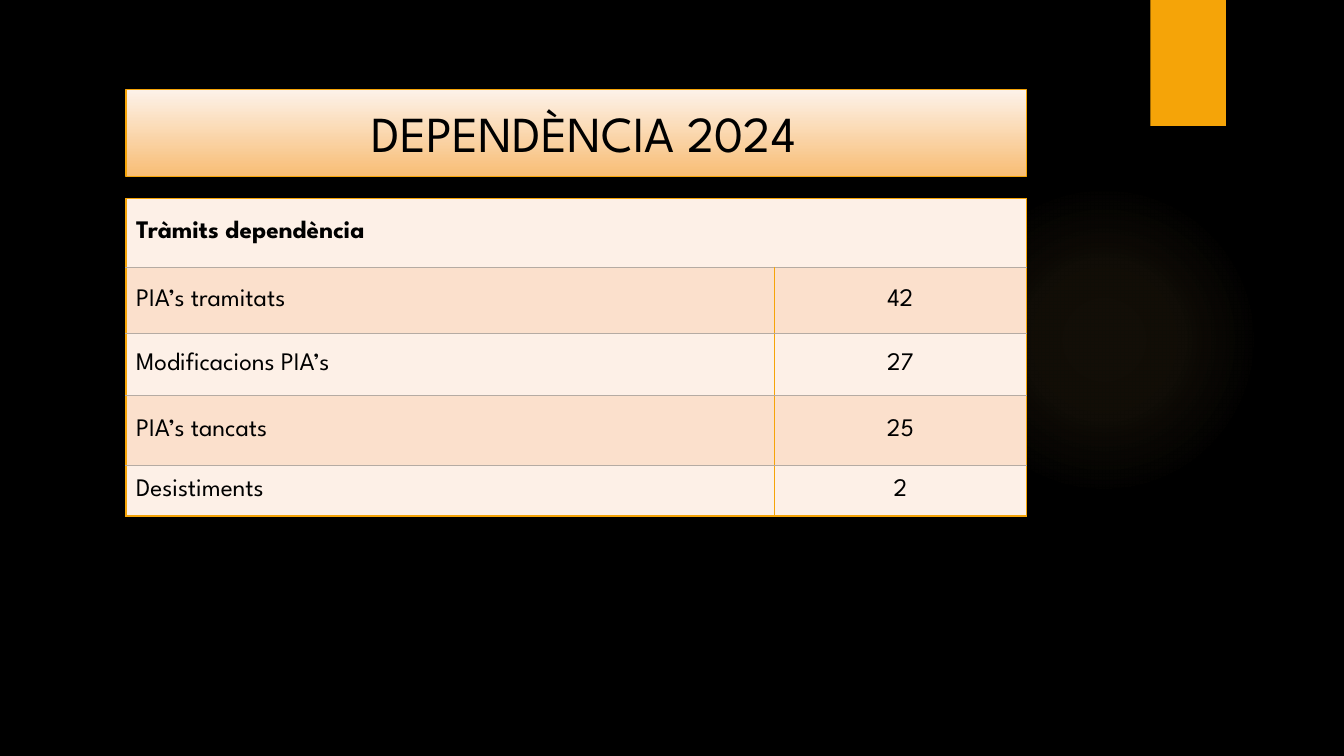
from lxml.etree import SubElement
from pptx import Presentation
from pptx.dml.color import RGBColor
from pptx.enum.shapes import MSO_SHAPE as Shape
from pptx.enum.text import MSO_ANCHOR as Anchor, PP_ALIGN as Align
from pptx.oxml import parse_xml
from pptx.oxml.ns import nsdecls, qn
from pptx.util import Inches, Pt

COLORS = {
    "background": "000000", "text": "000000", "accent": "F5A408",
    "glow": "FAC96A", "title_top": "FDF2E9", "title_bottom": "F8BD75",
    "light": "FDF0E7", "dark": "FBE0CC", "rule": "B5ABA3",
}
FONT = "League Spartan"
HEADING = "Tràmits dependència"
ROWS = [("PIA’s tramitats", "42"), ("Modificacions PIA’s", "27"),
        ("PIA’s tancats", "25"), ("Desistiments", "2")]
COLUMN_WIDTHS = [6.43, 2.5]
ROW_HEIGHTS = [0.68, 0.66, 0.61, 0.7, 0.5]
LEFT, WIDTH = 1.25, 8.93


def color(name):
    """Return the named colour."""
    return RGBColor.from_string(COLORS[name])


def add_span(para, text, **values):
    """Add a run with the given font values."""
    span = para.add_run()
    span.text = text
    for name, value in {"name": FONT, **values}.items():
        setattr(span.font, name, value)
    span.font.color.rgb = color("text")


def add_box(page, kind, left, top, width, height):
    """Add a shape without shadow or outline."""
    box = page.shapes.add_shape(kind, *map(Inches, (left, top, width, height)))
    box.shadow.inherit = False
    box.line.fill.background()
    return box


def add_glow(page):
    """Add the faint round glow at the right."""
    box = add_box(page, Shape.OVAL, 9.41, 1.83, 3.08, 3.08)
    stops = "".join(
        f'<a:gs pos="{place * 1000}"><a:srgbClr val="{COLORS["glow"]}">'
        f'<a:alpha val="{alpha * 1000}"/></a:srgbClr></a:gs>'
        for place, alpha in ((0, 7), (36, 6), (69, 0)))
    gradient = parse_xml(
        f'<a:gradFill {nsdecls("a")}><a:gsLst>{stops}</a:gsLst><a:path path="circle">'
        '<a:fillToRect l="50000" t="50000" r="50000" b="50000"/></a:path></a:gradFill>')
    box.element.spPr.find(qn("a:prstGeom")).addnext(gradient)


def add_tag(page):
    """Add the solid tag at the top edge."""
    box = add_box(page, Shape.RECTANGLE, 11.41, 0, 0.75, 1.25)
    box.fill.solid()
    box.fill.fore_color.rgb = color("accent")


def add_title(page):
    """Add the title bar with its vertical gradient."""
    box = add_box(page, Shape.RECTANGLE, LEFT, 0.89, WIDTH, 0.86)
    box.fill.gradient()
    box.fill.gradient_angle = 270
    for stop, name, place in zip(box.fill.gradient_stops, ("title_top", "title_bottom"), (0, 1)):
        stop.color.rgb = color(name)
        stop.position = place
    box.line.color.rgb = color("accent")
    box.line.width = Pt(0.75)
    frame = box.text_frame
    frame.word_wrap = True
    frame.vertical_anchor = Anchor.MIDDLE
    para = frame.paragraphs[0]
    para.alignment = Align.CENTER
    para.line_spacing = 0.9
    add_span(para, " ", size=Pt(44))
    add_span(para, "DEPENDÈNCIA 2024", size=Pt(36))


def set_borders(cell, row, last_row):
    """Draw accent borders, with grey rules between rows."""
    names = {"lnL": "accent", "lnR": "accent",
             "lnT": "rule" if row else "accent",
             "lnB": "rule" if row < last_row else "accent"}
    properties = cell._tc.get_or_add_tcPr()
    for index, (tag, name) in enumerate(names.items()):
        line = parse_xml(f'<a:{tag} {nsdecls("a")} w="{Pt(1)}"/>')
        fill = SubElement(line, qn("a:solidFill"))
        SubElement(fill, qn("a:srgbClr"), val=COLORS[name])
        properties.insert(index, line)


def add_procedures(page):
    """Add the table of procedures."""
    rows = [(HEADING, ""), *ROWS]
    frame = page.shapes.add_table(len(rows), 2, Inches(LEFT), Inches(1.97),
                                  Inches(WIDTH), Inches(sum(ROW_HEIGHTS)))
    table = frame.table
    for column, width in zip(table.columns, COLUMN_WIDTHS):
        column.width = Inches(width)
    for row, height in zip(table.rows, ROW_HEIGHTS):
        row.height = Inches(height)
    for row, texts in enumerate(rows):
        for column, text in enumerate(texts):
            cell = table.cell(row, column)
            cell.vertical_anchor = Anchor.MIDDLE
            cell.fill.solid()
            cell.fill.fore_color.rgb = color("dark" if row % 2 else "light")
            set_borders(cell, row, len(rows) - 1)
            if text:
                para = cell.text_frame.paragraphs[0]
                para.alignment = Align.CENTER if column else Align.LEFT
                add_span(para, text, size=Pt(18), bold=row == 0)
    table.cell(0, 0).merge(table.cell(0, 1))


def main():
    """Build and save the slide."""
    deck = Presentation()
    deck.slide_width, deck.slide_height = Inches(13.33), Inches(7.5)
    page = deck.slides.add_slide(deck.slide_layouts[6])
    page.background.fill.solid()
    page.background.fill.fore_color.rgb = color("background")
    add_glow(page)
    add_tag(page)
    add_title(page)
    add_procedures(page)
    deck.save("out.pptx")


if __name__ == "__main__":
    main()
